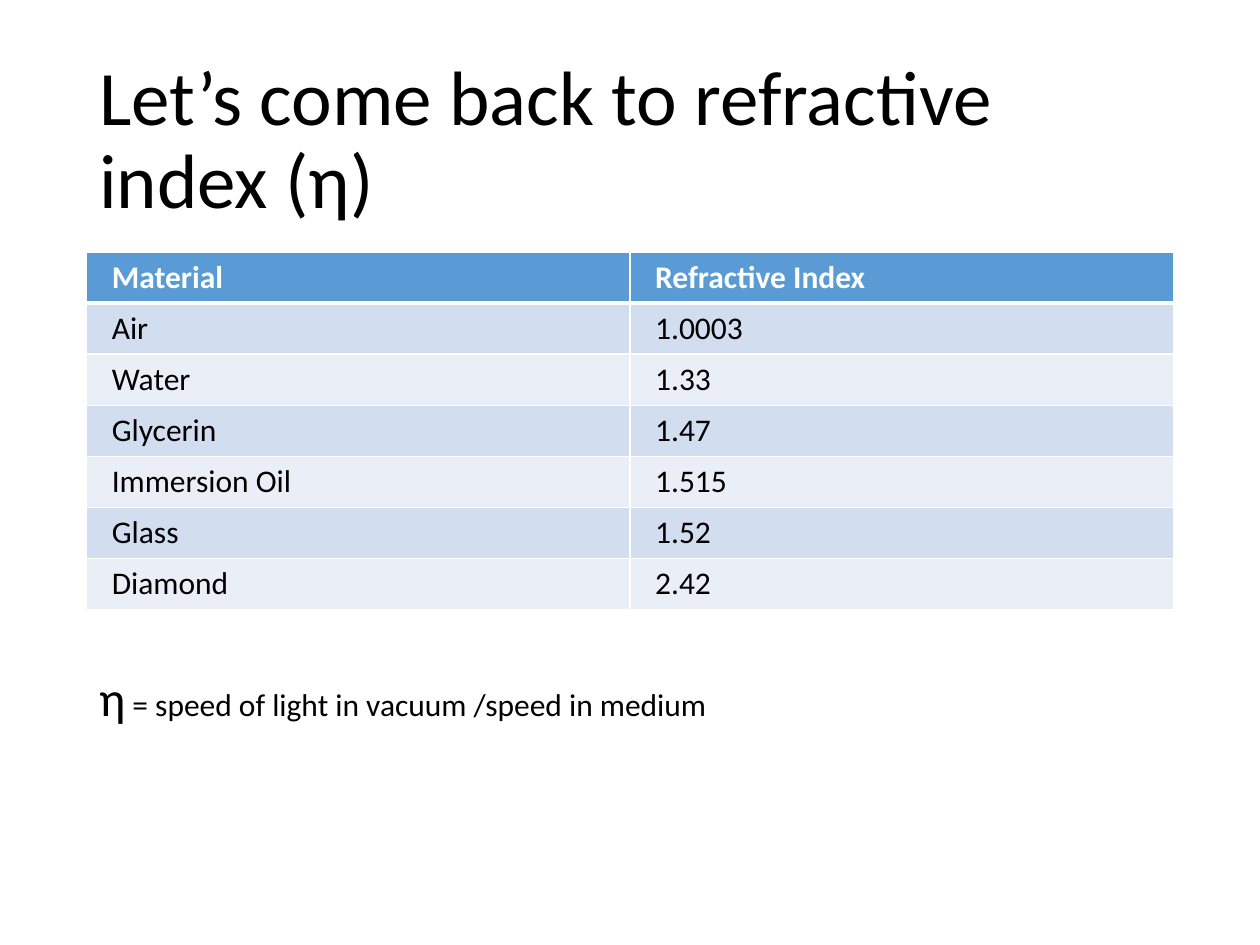
from lxml.etree import SubElement
from pptx import Presentation
from pptx.dml.color import RGBColor
from pptx.enum.text import MSO_ANCHOR as Anchor, PP_ALIGN as Align
from pptx.oxml.ns import qn
from pptx.util import Pt

FONT = "Calibri"
BLACK, WHITE = "000000", "FFFFFF"
HEADER_FILL = "5B9BD5"
BAND_FILLS = ("D2DEEF", "EAEFF7")
LEFT, CONTENT_WIDTH = 49.5, 621
ROW_HEIGHT = 29.2
MATERIALS = [
    ("Material", "Refractive Index"),
    ("Air", "1.0003"),
    ("Water", "1.33"),
    ("Glycerin", "1.47"),
    ("Immersion Oil", "1.515"),
    ("Glass", "1.52"),
    ("Diamond", "2.42"),
]


def color(value):
    return RGBColor.from_string(value)


def format_run(run, size, value=BLACK, bold=False):
    run.font.name = FONT
    run.font.size = Pt(size)
    run.font.bold = bold
    run.font.color.rgb = color(value)


def set_borders(cell, bottom_width):
    """Draw white cell borders; they must precede the fill in the XML."""
    properties = cell._tc.get_or_add_tcPr()
    for side, width in (("L", 1), ("R", 1), ("T", 1), ("B", bottom_width)):
        line = SubElement(properties, qn(f"a:ln{side}"), w=str(Pt(width)))
        fill = SubElement(line, qn("a:solidFill"))
        SubElement(fill, qn("a:srgbClr"), val=WHITE)


def add_title(slide, text):
    title = slide.shapes.title
    title.left, title.top = Pt(LEFT), Pt(29)
    title.width, title.height = Pt(CONTENT_WIDTH), Pt(104.4)
    frame = title.text_frame
    frame.text = text
    frame.vertical_anchor = Anchor.MIDDLE
    paragraph = frame.paragraphs[0]
    paragraph.alignment = Align.LEFT
    paragraph.line_spacing = 0.9
    format_run(paragraph.runs[0], 44)


def fill_cell(cell, text, row_index):
    is_header = row_index == 0
    set_borders(cell, 3 if is_header or row_index == 1 and False else 1)
    cell.fill.solid()
    cell.fill.fore_color.rgb = color(
        HEADER_FILL if is_header else BAND_FILLS[(row_index - 1) % 2])
    cell.margin_left = cell.margin_right = Pt(14.4)
    cell.margin_top = cell.margin_bottom = Pt(3.6)
    cell.text_frame.text = text
    format_run(cell.text_frame.paragraphs[0].runs[0], 18,
               WHITE if is_header else BLACK, is_header)


def add_material_table(slide, rows):
    table = slide.shapes.add_table(
        len(rows), len(rows[0]), Pt(LEFT), Pt(144),
        Pt(CONTENT_WIDTH), Pt(ROW_HEIGHT * len(rows))).table
    for row_index, row in enumerate(rows):
        table.rows[row_index].height = Pt(ROW_HEIGHT)
        for column_index, text in enumerate(row):
            fill_cell(table.cell(row_index, column_index), text, row_index)


def add_definition(slide, symbol, meaning):
    box = slide.shapes.add_textbox(Pt(LEFT), Pt(378), Pt(476.6), Pt(41))
    box.text_frame.word_wrap = True
    paragraph = box.text_frame.paragraphs[0]
    for text, size in ((symbol, 28), (meaning, 18)):
        run = paragraph.add_run()
        run.text = text
        format_run(run, size)


def main():
    presentation = Presentation()
    presentation.slide_width, presentation.slide_height = Pt(720), Pt(540)
    slide = presentation.slides.add_slide(presentation.slide_layouts[5])
    add_title(slide, "Let’s come back to refractive index (η)")
    add_material_table(slide, MATERIALS)
    add_definition(slide, "η", " = speed of light in vacuum /speed in medium")
    presentation.save("out.pptx")


if __name__ == "__main__":
    main()
